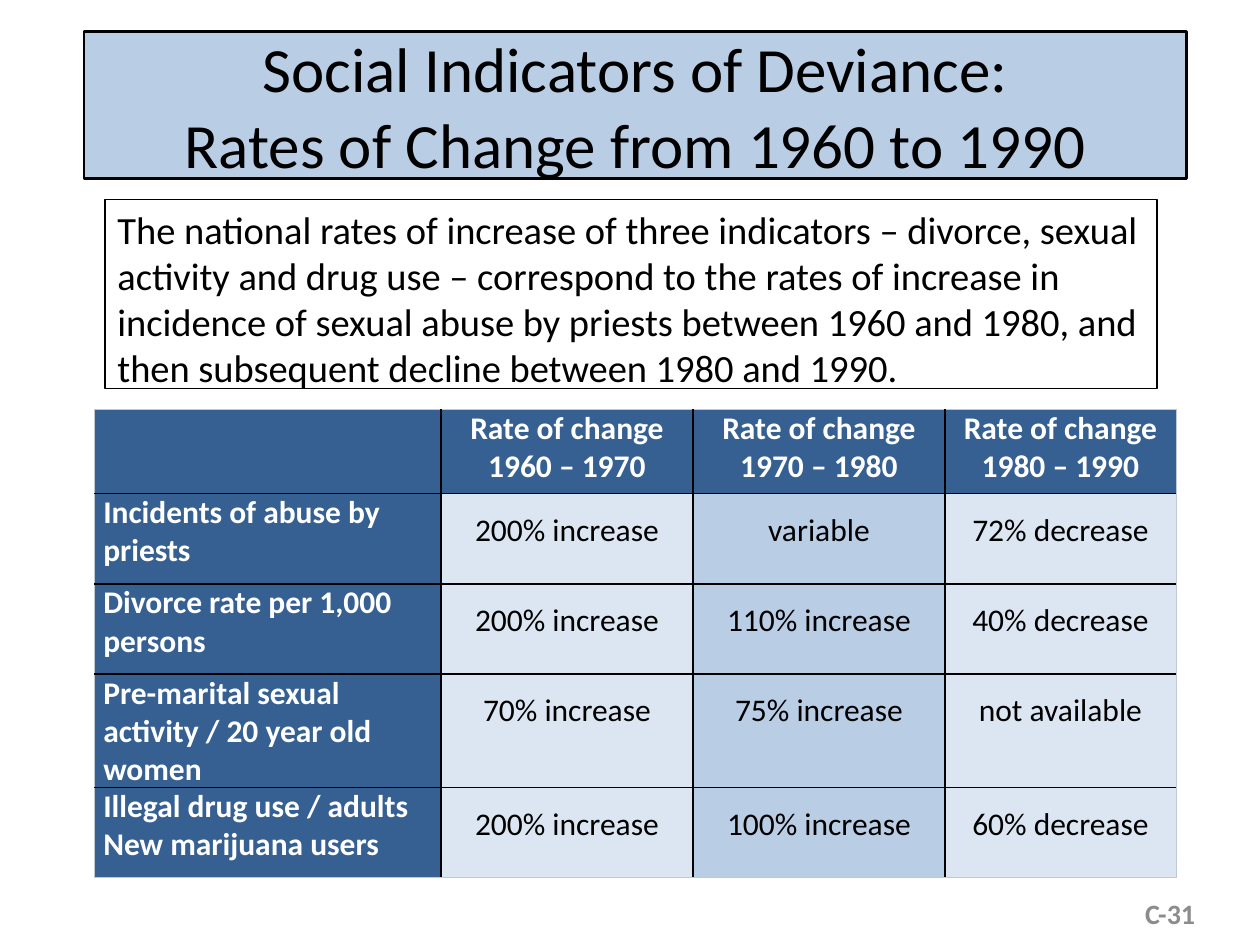
from lxml.etree import SubElement as Sub
from pptx import Presentation
from pptx.dml.color import RGBColor
from pptx.enum.shapes import MSO_SHAPE as Shape
from pptx.enum.text import MSO_ANCHOR as Anchor, PP_ALIGN as Align
from pptx.oxml.ns import qn
from pptx.util import Inches, Pt

BLACK, WHITE, GREY = "000000", "FFFFFF", "8C8C8C"
NAVY, BLUE, PALE, EDGE = "376092", "B9CDE5", "DCE6F2", "C0C8D2"

HEAD = ["", "Rate of change\n1960 – 1970", "Rate of change\n1970 – 1980",
        "Rate of change\n1980 – 1990"]
ROWS = [
    ["Incidents of abuse by priests",
     "200% increase", "variable", "72% decrease"],
    ["Divorce rate per 1,000 persons",
     "200% increase", "110% increase", "40% decrease"],
    ["Pre-marital sexual activity / 20 year old women",
     "70% increase", "75% increase", "not available"],
    ["Illegal drug use / adults\nNew marijuana users",
     "200% increase", "100% increase", "60% decrease"],
]
NOTE = ("The national rates of increase of three indicators – divorce, sexual "
        "activity and drug use – correspond to the rates of increase in "
        "incidence of sexual abuse by priests between 1960 and 1980, and then "
        "subsequent decline between 1980 and 1990.")


def rgb(code):
    return RGBColor.from_string(code)


def grid(count):
    """Length of so many grid units, twelve to the inch."""
    return Inches(count / 12)


class Board:
    font = "Calibri"

    def __init__(self, wide, high):
        self.deck = Presentation()
        self.deck.slide_width, self.deck.slide_height = grid(wide), grid(high)
        self.slide = self.deck.slides.add_slide(self.deck.slide_layouts[6])

    def letter(self, frame, text, size, color=BLACK, bold=False, align=Align.LEFT):
        """Set the text of a frame and format its runs."""
        frame.word_wrap = True
        frame.text = text
        for para in frame.paragraphs:
            para.alignment = align
            for run in para.runs:
                font = run.font
                font.name, font.size, font.bold = self.font, Pt(size), bold
                font.color.rgb = rgb(color)

    def panel(self, area, text, size, line, fill=None,
              align=Align.LEFT, anchor=Anchor.TOP):
        box = self.slide.shapes.add_shape(Shape.RECTANGLE, *map(grid, area))
        box.shadow.inherit = False
        if fill:
            box.fill.solid()
            box.fill.fore_color.rgb = rgb(fill)
        else:
            box.fill.background()
        box.line.color.rgb, box.line.width = rgb(BLACK), Pt(line)
        self.letter(box.text_frame, text, size, align=align)
        box.text_frame.vertical_anchor = anchor
        return box

    def label(self, area, text, size, color):
        box = self.slide.shapes.add_textbox(*map(grid, area))
        self.letter(box.text_frame, text, size, color, True, Align.RIGHT)
        box.text_frame.vertical_anchor = Anchor.MIDDLE

    def border(self, cell, outer):
        """Draw the four sides: pale where outer is true, black elsewhere."""
        props = cell._tc.get_or_add_tcPr()
        for side, edge in zip("LRTB", outer):
            line = Sub(props, qn("a:ln" + side), w=str(Pt(0.5 if edge else 1)))
            fill = Sub(line, qn("a:solidFill"))
            Sub(fill, qn("a:srgbClr"), val=EDGE if edge else BLACK)

    def table(self, left, top, cols, rows, data):
        area = map(grid, (left, top, sum(cols), sum(rows)))
        table = self.slide.shapes.add_table(len(rows), len(cols), *area).table
        table.first_row = table.horz_banding = False
        for col, width in zip(table.columns, cols):
            col.width = grid(width)
        for row, height in zip(table.rows, rows):
            row.height = grid(height)
        for r, texts in enumerate(data):
            for c, text in enumerate(texts):
                cell = table.cell(r, c)
                head = r == 0 or c == 0
                self.border(cell, (c == 0, c == len(cols) - 1,
                                   r == 0, r == len(rows) - 1))
                cell.fill.solid()
                cell.fill.fore_color.rgb = rgb(
                    NAVY if head else BLUE if c == 2 else PALE)
                cell.margin_left = cell.margin_right = Inches(0.07)
                cell.margin_top = Inches(0 if head else 0.14)
                cell.margin_bottom = 0
                self.letter(cell.text_frame, text, 18, WHITE if head else BLACK,
                            head, Align.CENTER if c else Align.LEFT)


def main():
    board = Board(120, 90)
    board.panel((8, 3, 105, 14),
                "Social Indicators of Deviance:\vRates of Change from 1960 to 1990",
                36, 1.5, BLUE, Align.CENTER, Anchor.MIDDLE)
    note = board.panel((10, 19, 100.2, 18), NOTE, 22, 0.75)
    note.text_frame.paragraphs[0].space_before = Pt(4.4)
    board.label((87, 84.6, 28, 4.8), "C-31", 16, GREY)
    board.table(9, 39, [33, 24, 24, 22], [8] + [8.6] * 4, [HEAD] + ROWS)
    board.deck.save("out.pptx")


if __name__ == "__main__":
    main()
